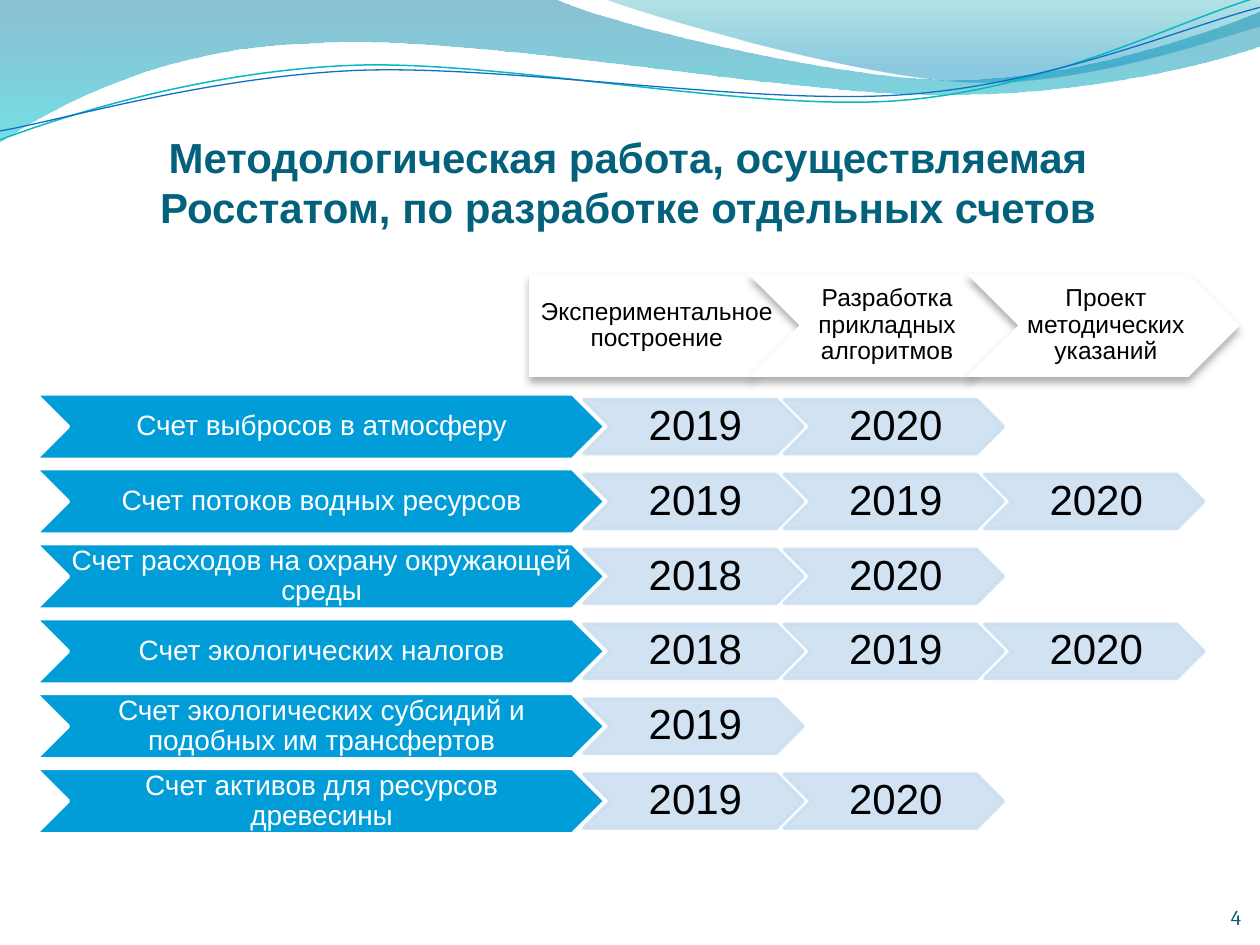
"""Build the slide on Rosstat's methodological work on separate accounts."""
from lxml import etree
from pptx import Presentation
from pptx.dml.color import RGBColor
from pptx.enum.shapes import MSO_SHAPE
from pptx.enum.text import MSO_ANCHOR, MSO_AUTO_SIZE, PP_ALIGN
from pptx.oxml.ns import qn
from pptx.util import Cm, Pt

CHEVRON, PENTAGON = MSO_SHAPE.CHEVRON, MSO_SHAPE.PENTAGON
MIDDLE, BOTTOM = MSO_ANCHOR.MIDDLE, MSO_ANCHOR.BOTTOM
CENTER, RIGHT = PP_ALIGN.CENTER, PP_ALIGN.RIGHT
NO_AUTOSIZE = MSO_AUTO_SIZE.NONE

WHITE = RGBColor(0xFF, 0xFF, 0xFF)
BLACK = RGBColor(0x00, 0x00, 0x00)
TITLE_TEAL = RGBColor(0x04, 0x61, 0x7B)
NUMBER_TEAL = RGBColor(0x04, 0x5D, 0x75)
ACCOUNT_BLUE = RGBColor(0x00, 0x9D, 0xD9)
YEAR_BLUE = RGBColor(0xCC, 0xDF, 0xF1)
DEEP_BLUE = RGBColor(0x00, 0x74, 0xA1)
TURQUOISE = RGBColor(0x00, 0xC6, 0xCF)
SEA_GREEN = RGBColor(0x00, 0xA1, 0xA9)
SKY_BLUE = RGBColor(0x00, 0x8B, 0xBF)
LINE_TEAL = RGBColor(0x0A, 0xB8, 0xBF)
LINE_BLUE = RGBColor(0x0F, 0x6F, 0xC6)

TITLE = "Методологическая работа, осуществляемая Росстатом, по разработке отдельных счетов"
STAGES = [
    "Экспериментальное построение",
    "Разработка прикладных алгоритмов",
    "Проект методических указаний",
]
ACCOUNTS = [
    ("Счет выбросов в атмосферу", ["2019", "2020"]),
    ("Счет потоков водных ресурсов", ["2019", "2019", "2020"]),
    ("Счет расходов на охрану окружающей среды", ["2018", "2020"]),
    ("Счет экологических налогов", ["2018", "2019", "2020"]),
    ("Счет экологических субсидий и подобных им трансфертов", ["2019"]),
    ("Счет активов для ресурсов древесины", ["2019", "2020"]),
]
PAGE_NUMBER = "4"

FILLED_WAVES = [
    ((0, 0),
     [[(11.18, -0.03)],
      [(12.09, 0.43), (16.87, 1.6), (19.25, 1.6)],
      [(21.67, 1.6), (24.33, 0.66), (25.4, 0.23)],
      [(25.43, 0.91)],
      [(24.97, 1.12), (22.1, 1.93), (18.95, 1.91)],
      [(15.8, 1.91), (9.7, 0.71), (6.53, 0.86)],
      [(3.28, 0.91), (1.17, 2.11), (-0.03, 2.87)]],
     [(0, DEEP_BLUE, 45), (1, TURQUOISE, 55)]),
    ((12.17, -0.03),
     [[(12.93, 0.28), (17.32, 1.57), (19.53, 1.65)],
      [(21.74, 1.75), (24.41, 0.81), (25.4, 0.53)],
      [(25.4, 0)]],
     [(0, SEA_GREEN, 30), (0.8, SKY_BLUE, 45)]),
]
LINE_WAVES = [
    ((0, 2.82),
     [[(1.22, 2.36), (4.01, 1.45), (7.04, 1.32)],
      [(10.03, 1.19), (15.06, 2.26), (18.11, 2.03)],
      [(21.16, 1.8), (23.83, 0.38), (25.35, -0.05)]],
     LINE_TEAL, 0.85),
    ((0, 2.64),
     [[(1.19, 2.44), (4.17, 1.55), (7.19, 1.42)],
      [(10.24, 1.3), (15.16, 2.13), (18.21, 1.91)],
      [(21.23, 1.7), (23.9, 0.53), (25.4, 0.15)]],
     LINE_BLUE, 0.75),
]

ACCOUNT_LEFT, ACCOUNT_TOP, ACCOUNT_W, ACCOUNT_H = 0.72, 7.94, 11.48, 1.32
ROW_PITCH = 1.51
YEAR_LEFT, YEAR_PITCH, YEAR_W, YEAR_H = 11.77, 4.04, 4.42, 1.09
STAGE_LEFT, STAGE_TOP, STAGE_PITCH, STAGE_W, STAGE_H = 10.67, 5.52, 4.41, 5.51, 2.08


def add_wave(slide, start, segments, close):
    ends = [(Cm(x), Cm(y)) for x, y in [start] + [segment[-1] for segment in segments]]
    builder = slide.shapes.build_freeform(*ends[0], scale=1.0)
    builder.add_line_segments(ends[1:], close=close)
    wave = builder.convert_to_shape()
    wave.shadow.inherit = False
    left, top = (min(values) for values in zip(*ends))
    straight_parts = list(wave._element.spPr.iter(qn("a:lnTo")))
    for straight, segment in zip(straight_parts, segments):
        if len(segment) == 3:
            curve = etree.Element(qn("a:cubicBezTo"))
            for x, y in segment:
                etree.SubElement(curve, qn("a:pt"), x=str(Cm(x) - left), y=str(Cm(y) - top))
            straight.getparent().replace(straight, curve)
    return wave


def set_opacity(shape, percents):
    colours = list(shape._element.spPr.iter(qn("a:srgbClr")))
    for colour, percent in zip(colours, percents):
        etree.SubElement(colour, qn("a:alpha"), val=str(percent * 1000))


def add_waves(slide):
    for start, segments, stops in FILLED_WAVES:
        wave = add_wave(slide, start, segments, True)
        wave.line.fill.background()
        wave.fill.gradient()
        wave.fill.gradient_angle = 270
        for stop, (position, colour, _) in zip(wave.fill.gradient_stops, stops):
            stop.position = position
            stop.color.rgb = colour
        set_opacity(wave, [opacity for _, _, opacity in stops])
    for start, segments, colour, width in LINE_WAVES:
        wave = add_wave(slide, start, segments, False)
        wave.fill.background()
        wave.line.color.rgb = colour
        wave.line.width = Pt(width)


def set_frame(frame, anchor, insets):
    frame.word_wrap = True
    frame.auto_size = NO_AUTOSIZE
    frame.vertical_anchor = anchor
    (frame.margin_left, frame.margin_top,
     frame.margin_right, frame.margin_bottom) = map(Cm, insets)


def write(frame, text, alignment, size, colour, name="Arial", bold=False):
    paragraph = frame.paragraphs[0]
    paragraph.alignment = alignment
    run = paragraph.add_run()
    run.text = text
    run.font.name, run.font.size, run.font.bold = name, Pt(size), bold
    run.font.color.rgb = colour
    return paragraph


def add_arrow(slide, kind, box, fill, outline, text, size, colour, insets):
    arrow = slide.shapes.add_shape(kind, *map(Cm, box))
    arrow.shadow.inherit = False
    arrow.fill.solid()
    arrow.fill.fore_color.rgb = fill
    if outline is None:
        arrow.line.fill.background()
    else:
        arrow.line.color.rgb = outline
        arrow.line.width = Pt(2)
    set_frame(arrow.text_frame, MIDDLE, insets)
    write(arrow.text_frame, text, CENTER, size, colour).line_spacing = 0.9
    return arrow


def add_drop_shadow(shape):
    effects = shape._element.spPr.find(qn("a:effectLst"))
    shadow = etree.SubElement(effects, qn("a:outerShdw"), blurRad=str(Pt(4.5)),
                              dist=str(Pt(3)), dir="5400000", rotWithShape="0")
    etree.SubElement(shadow, qn("a:srgbClr"), val="5A5A5A")
    set_opacity(shape, [100, 48])


def add_title(slide):
    title = slide.shapes.title
    title.left, title.top, title.width, title.height = map(Cm, (0.9, 2.51, 23.52, 2.31))
    set_frame(title.text_frame, MIDDLE, (0.25, 0.13, 0.25, 0.13))
    write(title.text_frame, TITLE, CENTER, 24, TITLE_TEAL, bold=True)


def add_page_number(slide):
    number = slide.shapes.add_textbox(*map(Cm, (22.91, 17.73, 2.11, 1.02)))
    set_frame(number.text_frame, BOTTOM, (0, 0, 0, 0))
    write(number.text_frame, PAGE_NUMBER, RIGHT, 12, NUMBER_TEAL, name="Cambria")


def main():
    deck = Presentation()
    deck.slide_width, deck.slide_height = Cm(25.4), Cm(19.05)
    slide = deck.slides.add_slide(deck.slide_layouts[5])
    add_waves(slide)
    add_title(slide)
    for row, (account, years) in enumerate(ACCOUNTS):
        top = ACCOUNT_TOP + row * ROW_PITCH
        add_arrow(slide, CHEVRON, (ACCOUNT_LEFT, top, ACCOUNT_W, ACCOUNT_H), ACCOUNT_BLUE,
                  WHITE, account, 16, WHITE, (0.05, 0.03, 0, 0.03))
        year_top = top + (ACCOUNT_H - YEAR_H) / 2
        for column, year in enumerate(years):
            box = (YEAR_LEFT + column * YEAR_PITCH, year_top, YEAR_W, YEAR_H)
            arrow = add_arrow(slide, CHEVRON, box, YEAR_BLUE, YEAR_BLUE, year, 24, BLACK,
                              (0.08, 0.05, 0, 0.05))
            set_opacity(arrow, [90, 90])
    for column, stage in enumerate(STAGES):
        box = (STAGE_LEFT + column * STAGE_PITCH, STAGE_TOP, STAGE_W, STAGE_H)
        arrow = add_arrow(slide, CHEVRON if column else PENTAGON, box, WHITE, None, stage,
                          14, BLACK, (0.15 if column else 0.2, 0.1, 0.05, 0.1))
        add_drop_shadow(arrow)
    add_page_number(slide)
    deck.save("out.pptx")


if __name__ == "__main__":
    main()
